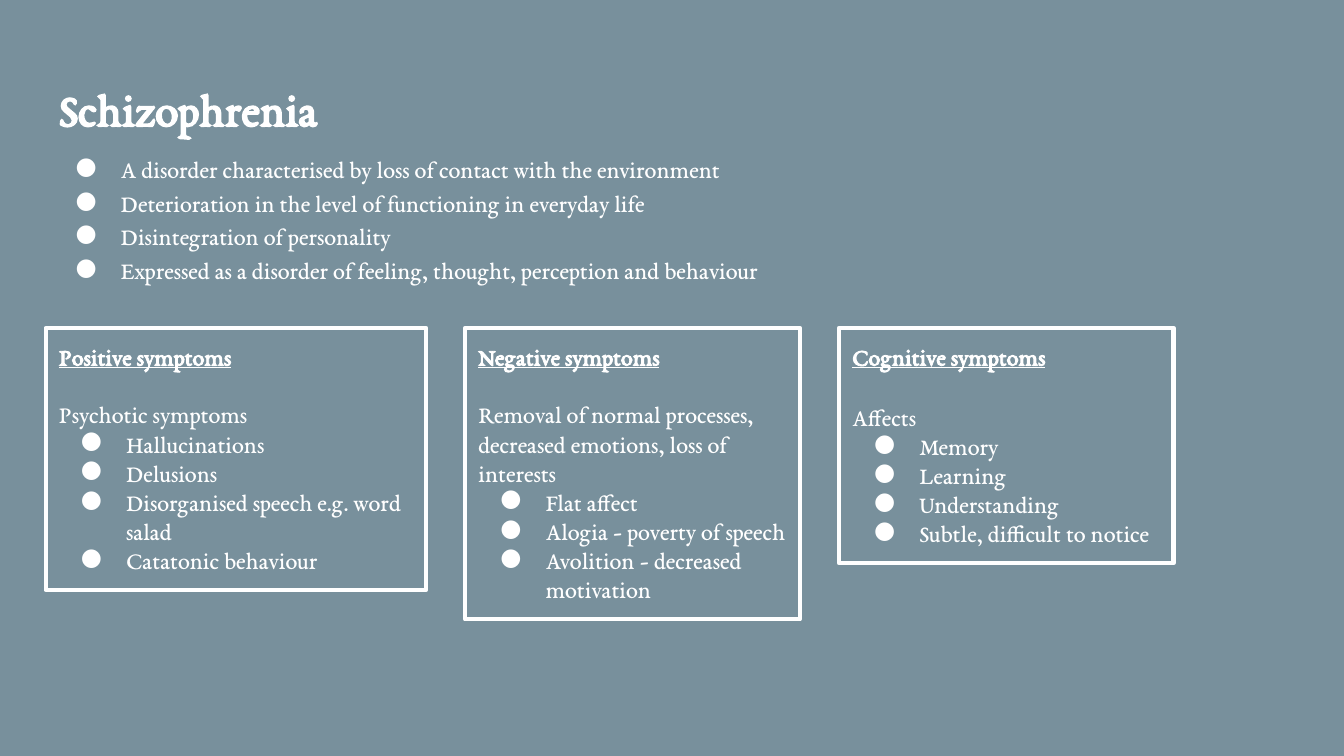
"""Build a slide on schizophrenia with three boxes of symptoms."""
import pptx
import pptx.dml.color
import pptx.enum.shapes
import pptx.enum.text
import pptx.oxml
import pptx.oxml.ns
import pptx.util

Pt = pptx.util.Pt


def color(value):
    return pptx.dml.color.RGBColor.from_string(value)


class SlideBuilder:
    font_name = "EB Garamond"
    ink = "FFFFFF"
    background = "78909C"
    text_size = 13
    inset = 7.2

    def __init__(self, slide):
        self.slide = slide
        slide.background.fill.solid()
        slide.background.fill.fore_color.rgb = color(self.background)

    def prepare_frame(self, shape):
        frame = shape.text_frame
        frame.word_wrap = True
        frame.vertical_anchor = pptx.enum.text.MSO_ANCHOR.TOP
        frame.margin_left = frame.margin_right = Pt(self.inset)
        frame.margin_top = frame.margin_bottom = Pt(self.inset)
        return frame

    def add_bullet(self, paragraph):
        properties = paragraph._p.get_or_add_pPr()
        properties.set("marL", str(Pt(36)))
        properties.set("indent", str(Pt(-24.2)))
        namespace = pptx.oxml.ns.nsdecls("a")
        for element in (
            f'<a:buClr {namespace}><a:srgbClr val="{self.ink}"/></a:buClr>',
            f'<a:buFont {namespace} typeface="{self.font_name}"/>',
            f'<a:buChar {namespace} char="●"/>',
        ):
            properties.append(pptx.oxml.parse_xml(element))

    def add_text(self, frame, text, size=text_size, bold=False, underline=False, bullet=False):
        paragraph = frame.paragraphs[0] if not frame.text else frame.add_paragraph()
        paragraph.text = text
        paragraph.alignment = pptx.enum.text.PP_ALIGN.LEFT
        if bullet:
            self.add_bullet(paragraph)
        font = paragraph.font
        font.name = self.font_name
        font.size = Pt(size)
        font.bold = bold
        font.underline = underline
        font.color.rgb = color(self.ink)
        return paragraph

    def text_box(self, left, top, width, height):
        shape = self.slide.shapes.add_textbox(Pt(left), Pt(top), Pt(width), Pt(height))
        return self.prepare_frame(shape)

    def title(self, text, *bounds):
        self.add_text(self.text_box(*bounds), text, size=25.2, bold=True)

    def bullet_list(self, items, *bounds):
        frame = self.text_box(*bounds)
        for item in items:
            self.add_text(frame, item, bullet=True).line_spacing = 1.15

    def symptom_box(self, left, top, width, height, heading, gap, intro, items):
        shape = self.slide.shapes.add_shape(
            pptx.enum.shapes.MSO_SHAPE.RECTANGLE, Pt(left), Pt(top), Pt(width), Pt(height)
        )
        shape.shadow.inherit = False
        shape.fill.background()
        shape.line.color.rgb = color(self.ink)
        shape.line.width = Pt(2.25)
        frame = self.prepare_frame(shape)
        self.add_text(frame, heading, bold=True, underline=True).space_after = Pt(gap)
        self.add_text(frame, intro)
        for item in items:
            self.add_text(frame, item, bullet=True)


def main():
    presentation = pptx.Presentation()
    presentation.slide_width = Pt(720)
    presentation.slide_height = Pt(405)
    builder = SlideBuilder(presentation.slides.add_slide(presentation.slide_layouts[6]))

    builder.title("Schizophrenia", 24.5, 35.3, 671, 45.4)
    builder.bullet_list(
        [
            "A disorder characterised by loss of contact with the environment",
            "Deterioration in the level of functioning in everyday life",
            "Disintegration of personality",
            "Expressed as a disorder of feeling, thought, perception and behaviour",
        ],
        21.6, 73.4, 553.7, 98.6,
    )

    symptom_groups = [
        (203.8, 140.4, "Positive symptoms", 15.6, "Psychotic symptoms",
         ["Hallucinations", "Delusions", "Disorganised speech e.g. word salad",
          "Catatonic behaviour"]),
        (179.3, 156.2, "Negative symptoms", 15.6,
         "Removal of normal processes, decreased emotions, loss of interests",
         ["Flat affect", "Alogia - poverty of speech", "Avolition - decreased motivation"]),
        (179.3, 126, "Cognitive symptoms", 16.8, "Affects",
         ["Memory", "Learning", "Understanding", "Subtle, difficult to notice"]),
    ]
    left = 24.5
    for width, height, heading, gap, intro, items in symptom_groups:
        builder.symptom_box(left, 175.7, width, height, heading, gap, intro, items)
        left += width + 20.9

    presentation.save("out.pptx")


if __name__ == "__main__":
    main()
